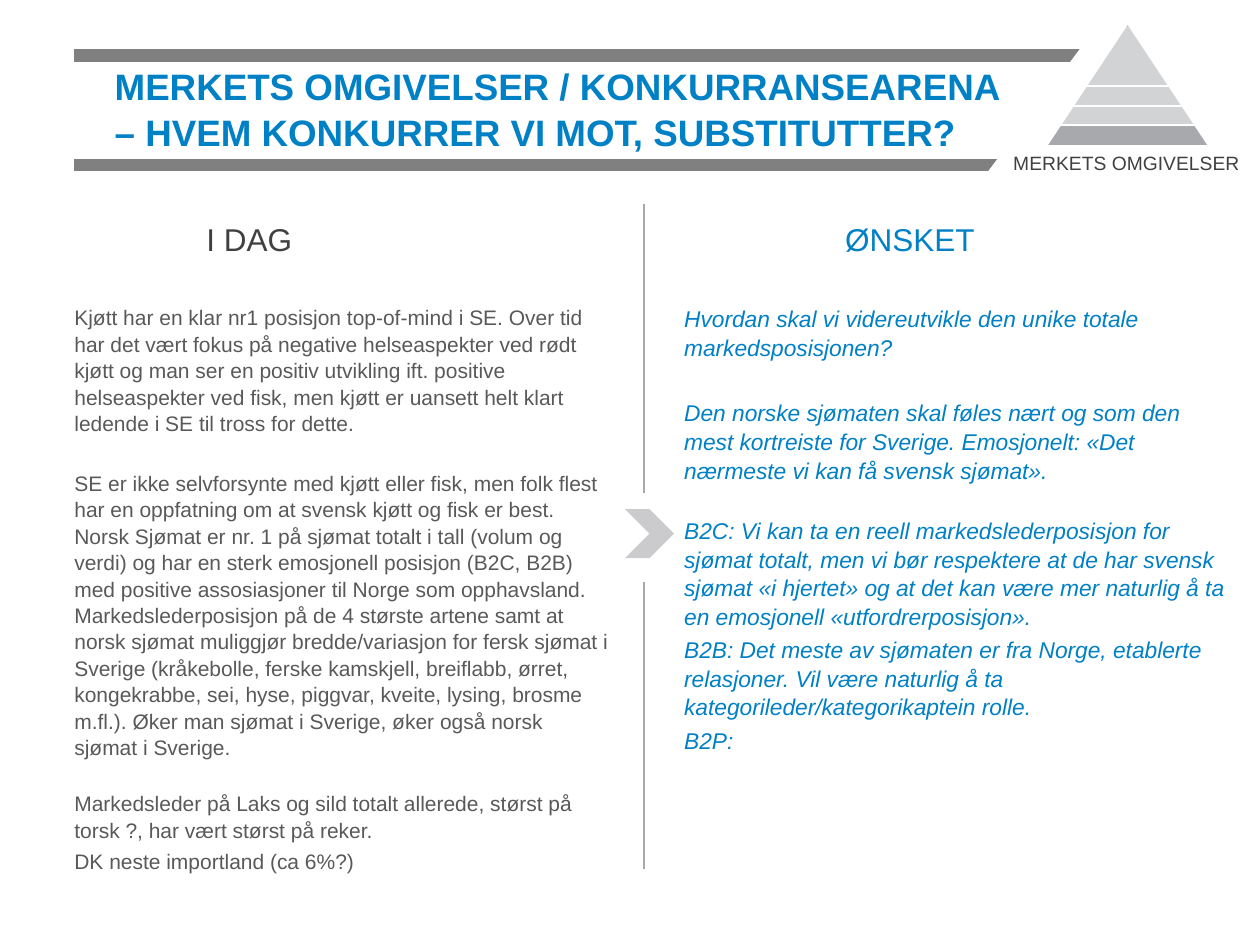
from typing import NamedTuple

import pptx
import pptx.dml.color
import pptx.enum.shapes
import pptx.enum.text
import pptx.oxml.xmlchemy
import pptx.util
from pptx.oxml.ns import qn

Inches = pptx.util.Inches
Pt = pptx.util.Pt
MSO = pptx.enum.shapes.MSO_SHAPE
ALIGN = pptx.enum.text.PP_ALIGN
ANCHOR = pptx.enum.text.MSO_ANCHOR

COLORS = {"blue": "0080C5", "dark": "404040", "text": "595959", "bar": "808080",
          "gray": "A8A9AD", "light": "CBCBCE", "white": "FFFFFF"}
LINE_SPACING = 1.05


class Line(NamedTuple):
    x1: float
    y1: float
    x2: float
    y2: float
    color: str
    width: float


class Shape(NamedTuple):
    kind: int
    box: tuple
    color: str
    adj: float | None = None
    rotation: float = 0
    alpha: int | None = None


class Label(NamedTuple):
    text: str
    box: tuple
    size: float
    color: str
    align: int = ALIGN.LEFT


class Column(NamedTuple):
    box: tuple
    font: dict
    color: str
    paragraphs: list  # (space before in points, text)


def rgb(name: str):
    return pptx.dml.color.RGBColor.from_string(COLORS[name])


def format_runs(p, color: str, **font) -> None:
    for r in p.runs:
        for key, value in {"name": "Arial", **font}.items():
            setattr(r.font, key, value)
        r.font.color.rgb = rgb(color)


def draw_line(s, line: Line) -> None:
    ends = [Inches(v) for v in line[:4]]
    c = s.shapes.add_connector(pptx.enum.shapes.MSO_CONNECTOR.STRAIGHT, *ends)
    c.line.color.rgb = rgb(line.color)
    c.line.width = Pt(line.width)
    c._element.spPr.append(pptx.oxml.xmlchemy.OxmlElement("a:effectLst"))


def draw_shape(s, shape: Shape) -> None:
    sp = s.shapes.add_shape(shape.kind, *map(Inches, shape.box))
    sp.shadow.inherit = False
    sp.rotation = shape.rotation
    sp.line.fill.background()
    sp.fill.solid()
    sp.fill.fore_color.rgb = rgb(shape.color)
    if shape.adj is not None:
        sp.adjustments[0] = shape.adj
    if shape.alpha is not None:
        alpha = pptx.oxml.xmlchemy.OxmlElement("a:alpha")
        alpha.set("val", str(shape.alpha * 1000))
        sp._element.spPr.find(".//" + qn("a:srgbClr")).append(alpha)


def draw_label(s, label: Label) -> None:
    tf = s.shapes.add_textbox(*map(Inches, label.box)).text_frame
    tf.word_wrap = True
    p = tf.paragraphs[0]
    p.text, p.alignment = label.text, label.align
    format_runs(p, label.color, size=Pt(label.size))


def place(sp, box: tuple, anchor):
    for key, value in zip(("left", "top", "width", "height"), box):
        setattr(sp, key, Inches(value))
    tf = sp.text_frame
    frame = {"margin_left": 0, "margin_top": 0, "margin_right": 0, "margin_bottom": 0,
             "word_wrap": True, "vertical_anchor": anchor,
             "auto_size": pptx.enum.text.MSO_AUTO_SIZE.NONE}
    for key, value in frame.items():
        setattr(tf, key, value)
    return tf


def fill_column(sp, column: Column) -> None:
    tf = place(sp, column.box, ANCHOR.TOP)
    for i, (gap, text) in enumerate(column.paragraphs):
        p = tf.add_paragraph() if i else tf.paragraphs[0]
        p.text = text
        pPr = p._p.get_or_add_pPr()
        pPr.set("marL", "0")
        pPr.set("indent", "0")
        pPr.append(pptx.oxml.xmlchemy.OxmlElement("a:buNone"))
        p.space_before, p.line_spacing = Pt(gap), LINE_SPACING
        format_runs(p, column.color, **column.font)


TODAY = Column((0.59, 2.41, 4.25, 4.49), {"size": Pt(12)}, "text", [
    (0, "Kjøtt har en klar nr1 posisjon top-of-mind i SE. Over tid har det vært fokus på "
        "negative helseaspekter ved rødt kjøtt og man ser en positiv utvikling ift. positive "
        "helseaspekter ved fisk, men kjøtt er uansett helt klart ledende i SE til tross for dette."),
    (19, "SE er ikke selvforsynte med kjøtt eller fisk, men folk flest har en oppfatning om at "
         "svensk kjøtt og fisk er best.\vNorsk Sjømat er nr. 1 på sjømat totalt i tall (volum og "
         "verdi) og har en sterk emosjonell posisjon (B2C, B2B) med positive assosiasjoner til "
         "Norge som opphavsland. Markedslederposisjon på de 4 største artene samt at norsk sjømat "
         "muliggjør bredde/variasjon for fersk sjømat i Sverige (kråkebolle, ferske kamskjell, "
         "breiflabb, ørret, kongekrabbe, sei, hyse, piggvar, kveite, lysing, brosme m.fl.). "
         "Øker man sjømat i Sverige, øker også norsk sjømat i Sverige."),
    (17, "Markedsleder på Laks og sild totalt allerede, størst på torsk ?, har vært størst på reker."),
    (2.4, "DK neste importland (ca 6%?)"),
])
WANTED = Column((5.43, 2.41, 4.3, 4.49), {"size": Pt(13), "italic": True}, "blue", [
    (0, "Hvordan skal vi videreutvikle den unike totale markedsposisjonen?"),
    (21, "Den norske sjømaten skal føles nært og som den mest kortreiste for Sverige. "
         "Emosjonelt: «Det nærmeste vi kan få svensk sjømat»."),
    (18, "B2C: Vi kan ta en reell markedslederposisjon for sjømat totalt, men vi bør respektere "
         "at de har svensk sjømat «i hjertet» og at det kan være mer naturlig å ta en emosjonell "
         "«utfordrerposisjon»."),
    (2.6, "B2B: Det meste av sjømaten er fra Norge, etablerte relasjoner. Vil være naturlig å ta "
          "kategorileder/kategorikaptein rolle."),
    (2.6, "B2P:"),
])
LABELS = [
    Label("I DAG", (1.54, 1.7, 3.15, 0.4), 18, "dark"),
    Label("ØNSKET", (6.61, 1.7, 2.83, 0.4), 18, "blue"),
    Label("MERKETS OMGIVELSER", (7.88, 1.15, 2.12, 0.29), 11, "dark", ALIGN.CENTER),
]


def main() -> None:
    prs = pptx.Presentation()
    prs.slide_width, prs.slide_height = Inches(10), Inches(7.5)
    s = prs.slides.add_slide(prs.slide_layouts[3])
    title, left, right = s.placeholders

    # Title and the two text columns
    tf = place(title, (0.91, 0.44, 7.09, 0.83), ANCHOR.MIDDLE)
    p = tf.paragraphs[0]
    p.text = "MERKETS OMGIVELSER / KONKURRANSEARENA – HVEM KONKURRER VI MOT, SUBSTITUTTER?"
    p.alignment, p.line_spacing = ALIGN.LEFT, LINE_SPACING
    format_runs(p, "blue", size=Pt(21), bold=True)
    fill_column(left, TODAY)
    fill_column(right, WANTED)

    # Title bars, cut off at a slant on the right
    for y in (0.44, 1.31):
        draw_line(s, Line(0.59, y, 9.57, y, "bar", 7))
    draw_shape(s, Shape(MSO.RECTANGLE, (8.59, 0.32, 1.13, 1.07), "white", rotation=90))
    draw_shape(s, Shape(MSO.TRAPEZOID, (7.76, 0.13, 2.01, 1.34), "white", adj=0.75))

    # Divider with chevron
    for top, bottom in ((1.62, 3.91), (4.62, 6.9)):
        draw_line(s, Line(5.11, top, 5.11, bottom, "gray", 1))
    draw_shape(s, Shape(MSO.CHEVRON, (4.96, 4.04, 0.39, 0.39), "light"))

    # Pyramid with its lowest level highlighted
    draw_shape(s, Shape(MSO.ISOSCELES_TRIANGLE, (8.32, 0.2, 1.26, 0.95), "gray"))
    for y in (0.99, 0.84, 0.68):
        draw_line(s, Line(8.32, y, 9.58, y, "white", 1))
    draw_shape(s, Shape(MSO.TRAPEZOID, (8.32, 0.21, 1.18, 0.79), "white", adj=0.66, alpha=49))

    for label in LABELS:
        draw_label(s, label)
    prs.save("out.pptx")


if __name__ == "__main__":
    main()
